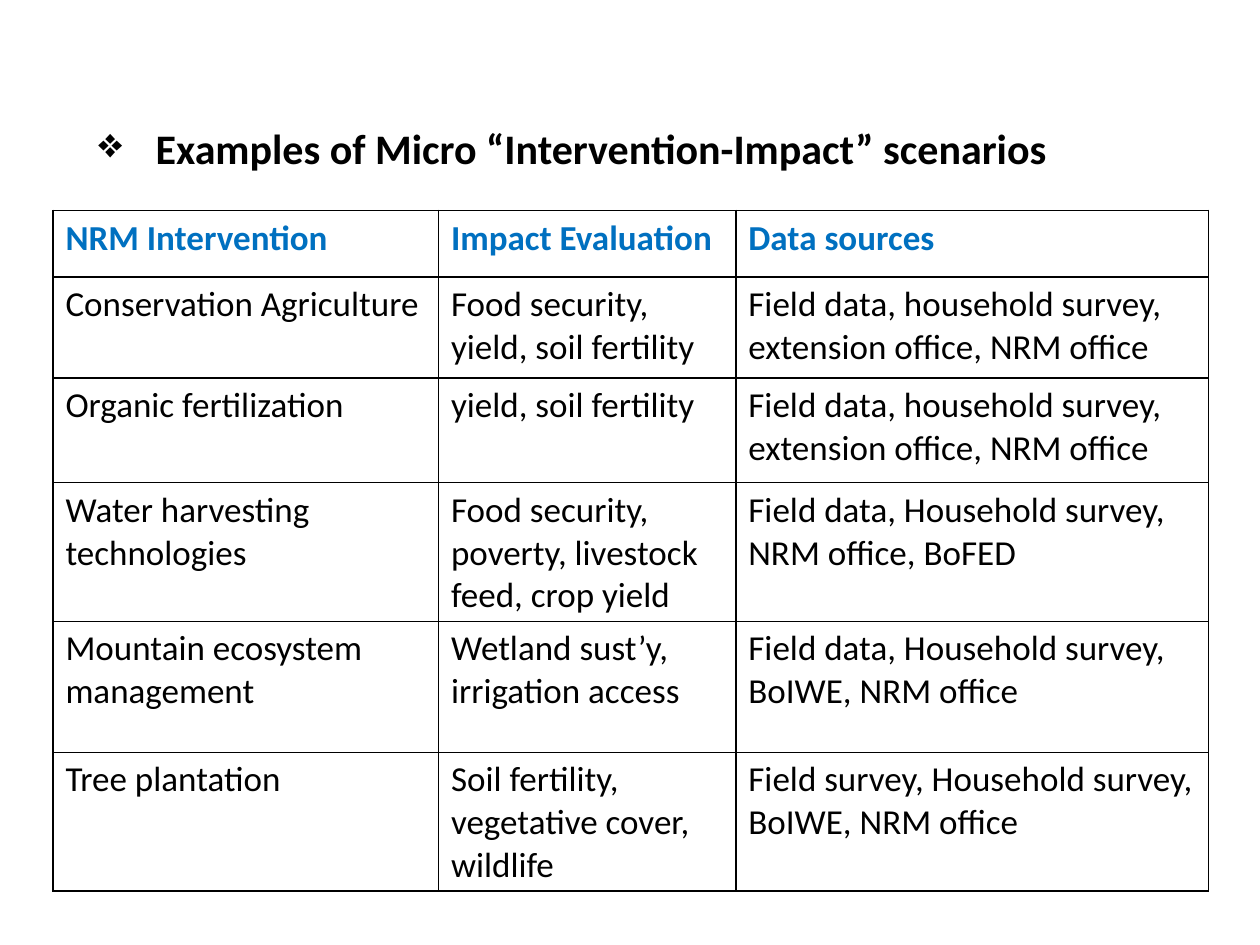
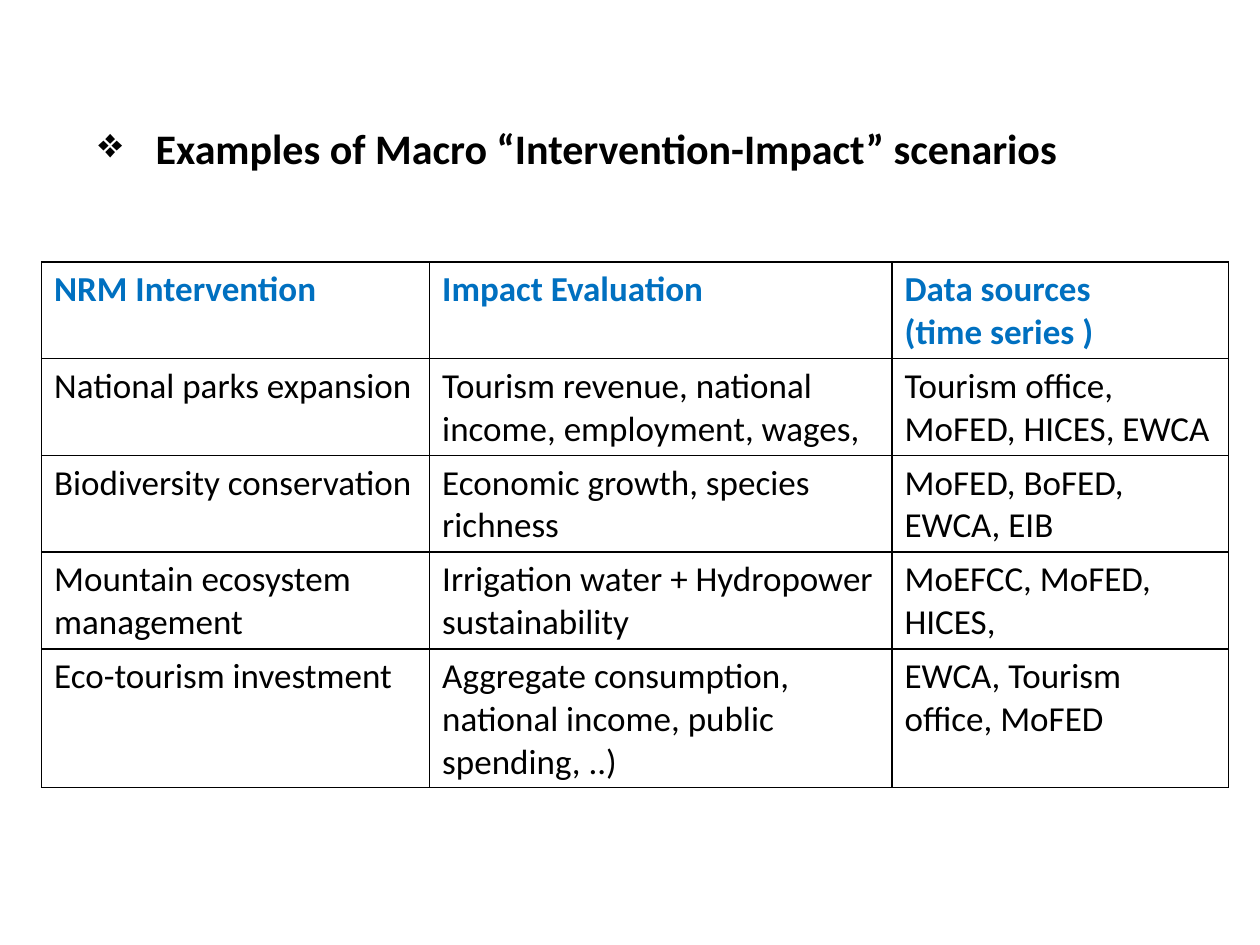
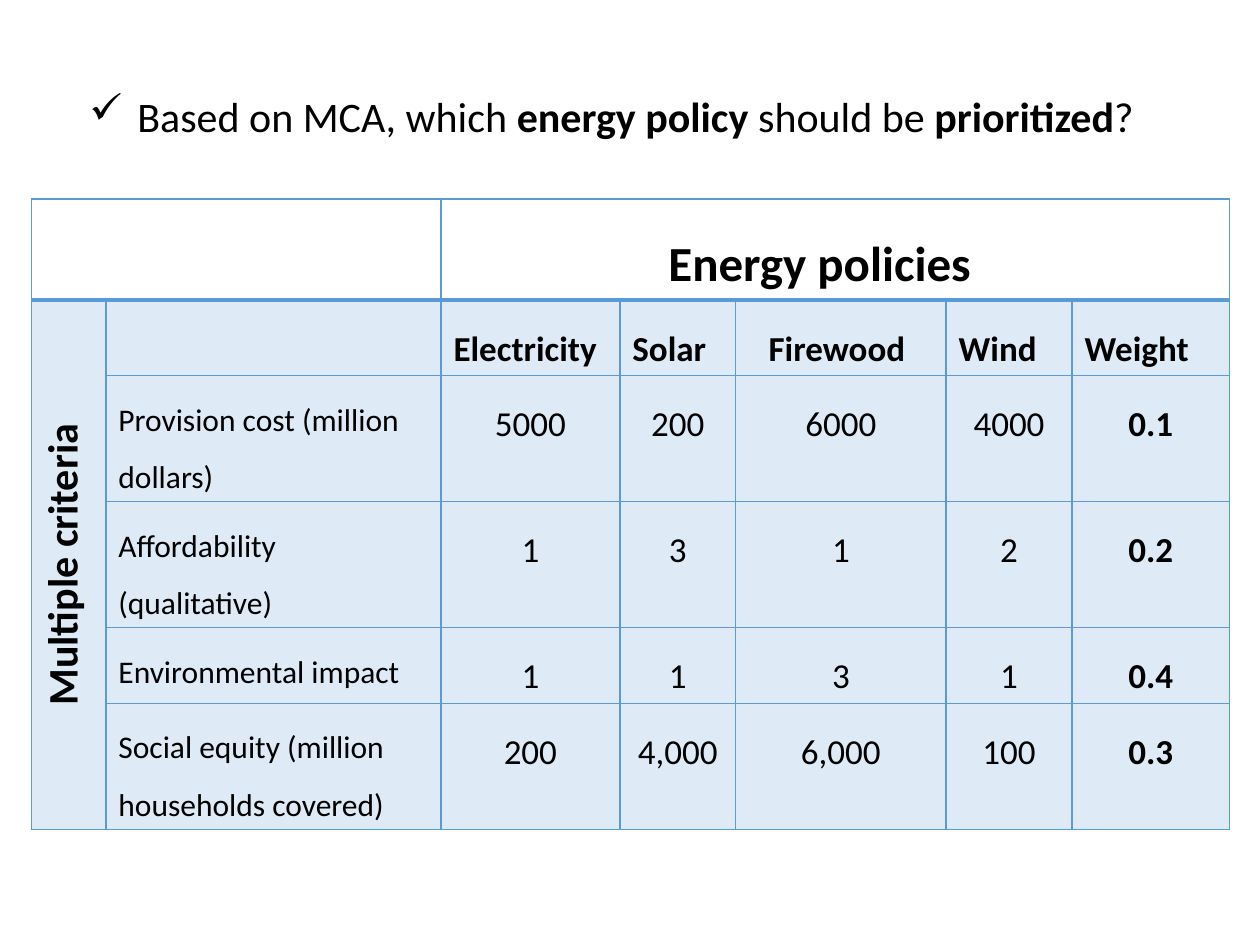
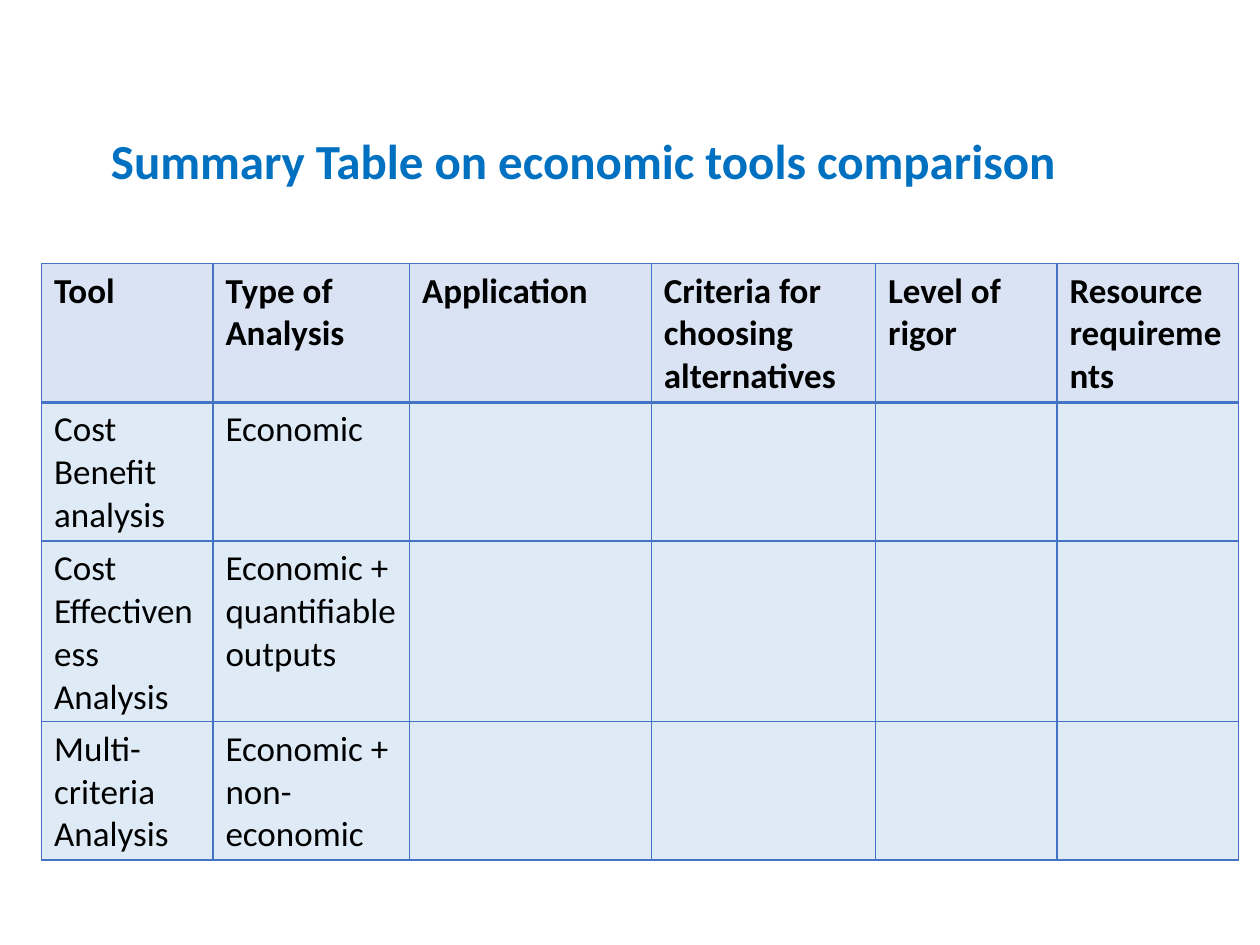
from lxml import etree
from pptx import Presentation
from pptx.dml.color import RGBColor
from pptx.enum.text import MSO_ANCHOR, MSO_AUTO_SIZE, PP_ALIGN
from pptx.oxml.ns import qn
from pptx.util import Inches, Pt

LEFT, CENTER, JUSTIFY = PP_ALIGN.LEFT, PP_ALIGN.CENTER, PP_ALIGN.JUSTIFY
TOP = MSO_ANCHOR.TOP
GROW = MSO_AUTO_SIZE.SHAPE_TO_FIT_TEXT

FONT = "Calibri"
BLACK, ACCENT = "000000", "0070C0"
POLICY_BLUE, SUMMARY_BLUE = "5B9BD5", "4472C4"
PALE_BLUE, HEADER_BLUE = "DEEBF7", "DAE3F3"
SCENARIO_TITLE_BOX = (0.68, 0.92, 8.63, 0.5)


def rgb(color):
    return RGBColor.from_string(color)


def add_run(paragraph, text, size, bold=False, color=BLACK):
    run = paragraph.add_run()
    run.text = text
    run.font.name = FONT
    run.font.size = Pt(size)
    run.font.bold = bold
    run.font.color.rgb = rgb(color)


# Titles
def set_bullet(paragraph, symbol):
    properties = paragraph._p.get_or_add_pPr()
    properties.set("marL", str(Inches(0.38)))
    properties.set("indent", str(Inches(-0.38)))
    etree.SubElement(properties, qn("a:buChar")).set("char", symbol)


def add_title(slide, box, runs, size, bullet=None, align=LEFT, spacing=None, color=BLACK):
    title = slide.shapes.title
    title.left, title.top, title.width, title.height = map(Inches, box)
    frame = title.text_frame
    frame.word_wrap = True
    frame.auto_size = GROW
    frame.vertical_anchor = TOP
    paragraph = frame.paragraphs[0]
    paragraph.alignment = align
    paragraph.line_spacing = spacing
    if bullet:
        set_bullet(paragraph, bullet)
    for text, bold in runs:
        add_run(paragraph, text, size, bold, color)


# Tables
def set_borders(cell, color, bottom=1):
    properties = cell._tc.get_or_add_tcPr()
    for side, width in (("L", 1), ("R", 1), ("T", 1), ("B", bottom)):
        line = etree.SubElement(properties, qn(f"a:ln{side}"), w=str(Pt(width)))
        fill = etree.SubElement(line, qn("a:solidFill"))
        etree.SubElement(fill, qn("a:srgbClr"), val=color)


def fill_cell(cell, color=None, opacity=None):
    if color is None:
        cell.fill.background()
        return
    cell.fill.solid()
    cell.fill.fore_color.rgb = rgb(color)
    if opacity:
        tint = cell._tc.tcPr.find(".//" + qn("a:solidFill") + "/" + qn("a:srgbClr"))
        for tint in cell._tc.tcPr.find(qn("a:solidFill")):
            etree.SubElement(tint, qn("a:alpha"), val=str(opacity * 1000))


def write_cell(cell, text, size=20, bold=False, color=BLACK, align=LEFT, spacing=None):
    frame = cell.text_frame
    for index, line in enumerate(text.split("\n") if text else []):
        paragraph = frame.add_paragraph() if index else frame.paragraphs[0]
        paragraph.alignment = align
        paragraph.line_spacing = spacing
        add_run(paragraph, line, size, bold, color)


def add_grid(slide, box, widths, heights, border, header_bottom=1):
    left, top, width, height = map(Inches, box)
    frame = slide.shapes.add_table(len(heights), len(widths), left, top, width, height)
    table = frame.table
    table.first_row = table.horz_banding = False
    for column, column_width in zip(table.columns, widths):
        column.width = Inches(column_width)
    for index, (row, row_height) in enumerate(zip(table.rows, heights)):
        row.height = Inches(row_height)
        for cell in row.cells:
            set_borders(cell, border, 1 if index else header_bottom)
    frame.height = height
    return table


def fill_table(table, rows, header_color, header_fill=None, body_fill=None):
    for r, texts in enumerate(rows):
        for c in range(len(table.columns)):
            cell = table.cell(r, c)
            fill_cell(cell, body_fill if r else header_fill)
            text = texts[c] if c < len(texts) else ""
            write_cell(cell, text, bold=r == 0, color=BLACK if r else header_color)


# Slides
def add_scenario_slide(slide, scale, box, widths, heights, rows):
    text = f" Examples of {scale} “Intervention-Impact” scenarios "
    add_title(slide, SCENARIO_TITLE_BOX, [(text, True)], 24, "❖", JUSTIFY)
    fill_table(add_grid(slide, box, widths, heights, BLACK), rows, ACCENT)


def add_policy_slide(slide):
    add_title(slide, (0.61, 0.67, 8.79, 0.5), [
        ("Based on MCA, which ", False), ("energy policy ", True),
        ("should be ", False), ("prioritized", True), ("?", False)], 24, "✓")
    table = add_grid(slide, (0.25, 1.58, 9.5, 4.68),
                     [0.59, 2.66, 1.42, 0.92, 1.67, 1, 1.25], [0.41] * 6,
                     POLICY_BLUE, header_bottom=2)

    # Backgrounds: clear header, then alternating bands
    for r, row in enumerate(table.rows):
        for c, cell in enumerate(row.cells):
            if r == 0:
                fill_cell(cell)
            elif r % 2 or c == 0:
                fill_cell(cell, POLICY_BLUE, 20)
            else:
                fill_cell(cell, PALE_BLUE)

    # Spanning headings
    table.cell(0, 0).merge(table.cell(0, 1))
    policies = table.cell(0, 2)
    policies.merge(table.cell(0, 6))
    policies.margin_right = Inches(0.35)
    write_cell(policies, "Energy policies", 28, True, align=CENTER, spacing=1.5)
    criteria = table.cell(1, 0)
    criteria.merge(table.cell(5, 0))
    criteria._tc.tcPr.set("vert", "vert270")
    write_cell(criteria, "Multiple criteria", 24, True, align=CENTER)

    # Policy names and scores
    for c, name in enumerate(["Electricity", "Solar", "Firewood ", "Wind", "Weight"], 2):
        write_cell(table.cell(1, c), name, bold=True, spacing=1.5,
                   align=CENTER if c == 4 else LEFT)
    for r, (criterion, *scores) in enumerate(CRITERIA, 2):
        write_cell(table.cell(r, 1), criterion, 18, spacing=1.5)
        for c, score in enumerate(scores, 2):
            write_cell(table.cell(r, c), score, bold=c == 6, align=CENTER, spacing=1.5)


def add_summary_slide(slide):
    add_title(slide, (0.78, 0.75, 8.38, 0.73),
              [("Summary Table on economic tools comparison", True)], 28,
              align=JUSTIFY, spacing=1.5, color=ACCENT)
    table = add_grid(slide, (0.33, 2.09, 9.5, 4.73),
                     [1.36, 1.56, 1.92, 1.78, 1.44, 1.44], [0.41] * 4,
                     SUMMARY_BLUE, header_bottom=2)
    fill_table(table, TOOLS, BLACK, HEADER_BLUE, PALE_BLUE)


# Content
MICRO_SCENARIOS = [
    ("NRM Intervention", "Impact Evaluation", "Data sources"),
    ("Conservation Agriculture", "Food security, yield, soil fertility",
     "Field data, household survey, extension office, NRM office"),
    ("Organic fertilization", "yield, soil fertility",
     "Field data, household survey, extension office, NRM office"),
    ("Water harvesting technologies", "Food security, poverty, livestock feed, crop yield",
     "Field data, Household survey, NRM office, BoFED"),
    ("Mountain ecosystem management", "Wetland sust’y, irrigation access",
     "Field data, Household survey, BoIWE, NRM office"),
    ("Tree plantation", "Soil fertility, vegetative cover, wildlife",
     "Field survey, Household survey, BoIWE, NRM office"),
]
MACRO_SCENARIOS = [
    ("NRM Intervention", "Impact Evaluation", "Data sources\n(time series )"),
    ("National parks expansion", "Tourism revenue, national income, employment, wages,",
     "Tourism office, MoFED, HICES, EWCA"),
    ("Biodiversity conservation", "Economic growth, species richness",
     "MoFED, BoFED, EWCA, EIB"),
    ("Mountain ecosystem management", "Irrigation water + Hydropower sustainability",
     "MoEFCC, MoFED, HICES,"),
    ("Eco-tourism investment",
     "Aggregate consumption, national income, public spending, ..)",
     "EWCA, Tourism office, MoFED"),
]
CRITERIA = [
    ("Provision cost (million dollars)", "5000", "200", "6000", "4000", "0.1"),
    ("Affordability (qualitative)", "1", "3", "1", "2", "0.2"),
    ("Environmental impact", "1", "1", "3", "1", "0.4"),
    ("Social equity (million households covered)", "200", "4,000", "6,000", "100", "0.3"),
]
TOOLS = [
    ("Tool", "Type of Analysis", "Application", "Criteria for choosing alternatives",
     "Level of rigor", "Resource requirements"),
    ("Cost Benefit analysis", "Economic"),
    ("Cost Effectiveness Analysis", "Economic + quantifiable outputs"),
    ("Multi-criteria Analysis", "Economic + non-economic"),
]


def main():
    deck = Presentation()
    deck.slide_width, deck.slide_height = Inches(10), Inches(7.5)
    title_only = deck.slide_layouts[5]
    micro, macro, policy, summary = [deck.slides.add_slide(title_only) for _ in range(4)]
    add_scenario_slide(micro, "Micro", (0.42, 1.67, 9.17, 5.41), [3.06, 2.36, 3.75],
                       [0.53, 0.8, 0.83, 1.04, 1.04, 1.04], MICRO_SCENARIOS)
    add_scenario_slide(macro, "Macro", (0.33, 2.08, 9.42, 4.17), [3.08, 3.67, 2.67],
                       [0.41, 0.41, 0.41, 0.25, 0.25], MACRO_SCENARIOS)
    add_policy_slide(policy)
    add_summary_slide(summary)
    deck.save("out.pptx")


if __name__ == "__main__":
    main()
